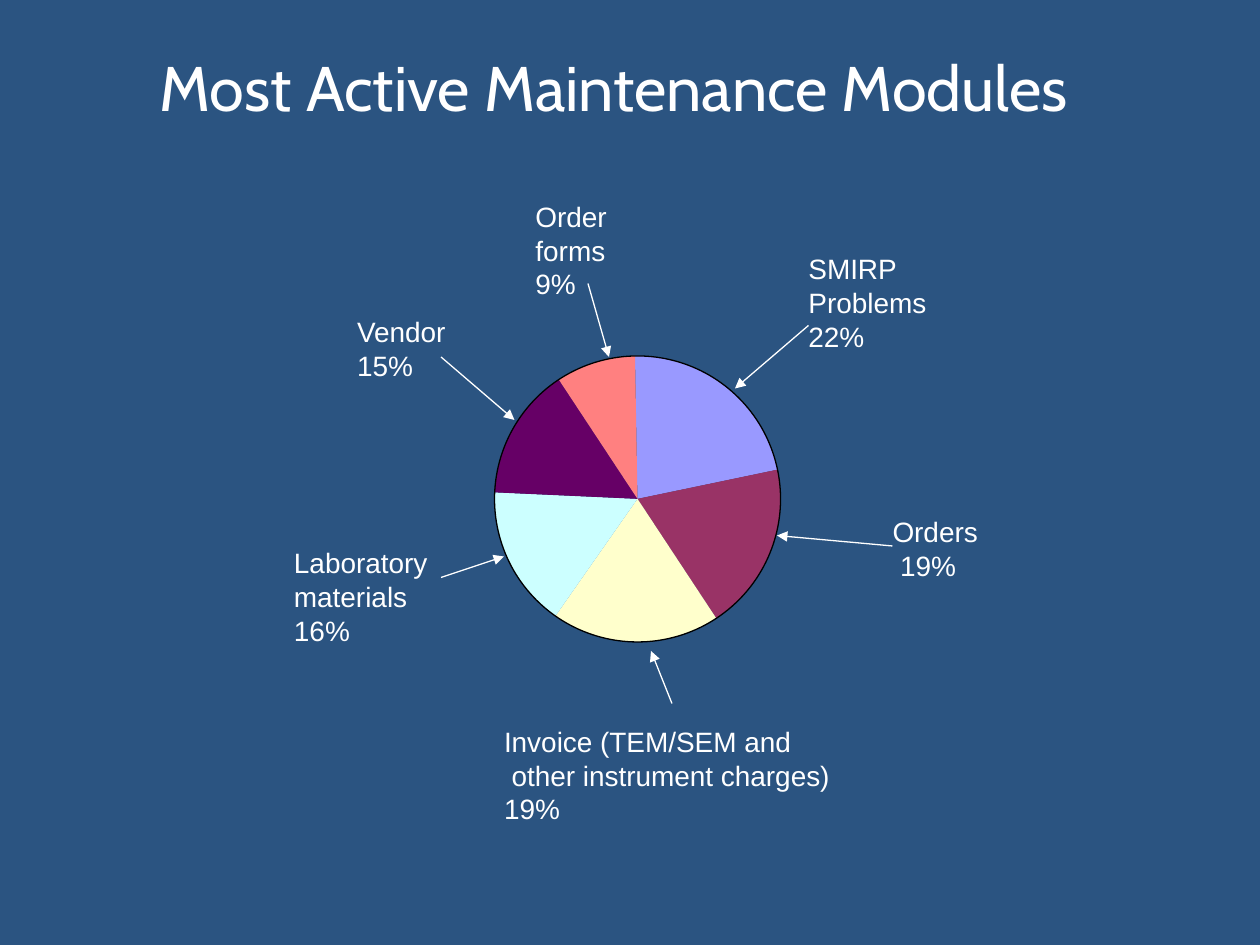
"""Build a slide with a labelled pie of the most active maintenance modules."""
from lxml.etree import SubElement
from pptx import Presentation
from pptx.chart.data import CategoryChartData
from pptx.dml.color import RGBColor
from pptx.enum.chart import XL_CHART_TYPE
from pptx.enum.shapes import MSO_CONNECTOR, MSO_SHAPE
from pptx.enum.text import MSO_ANCHOR, PP_ALIGN
from pptx.oxml import parse_xml
from pptx.oxml.ns import nsdecls, qn
from pptx.util import Inches, Pt

COLORS = {"background": "2B5481", "text": "FFFFFF", "outline": "000000"}
TITLE = "Most Active Maintenance Modules"
TITLE_BOX = (14, 4, 92.5, 8.5)
MODULES = [
    {"lines": ["SMIRP", "Problems"], "share": 22, "color": "9999FF",
     "label": (77, 24, 12), "arrow": (77, 31, 70, 37)},
    {"lines": ["Orders"], "share": 19, "color": "993366", "indent": True,
     "label": (85, 49, 9), "arrow": (85, 52, 74, 51)},
    {"lines": ["Invoice (TEM/SEM and", "other instrument charges)"], "share": 19,
     "color": "FFFFCC", "indent": True, "label": (48, 69, 32), "arrow": (64, 67, 62, 62)},
    {"lines": ["Laboratory", "materials"], "share": 16, "color": "CCFFFF",
     "label": (28, 52, 13), "arrow": (42, 55, 48, 53)},
    {"lines": ["Vendor"], "share": 15, "color": "660066",
     "label": (34, 30, 9), "arrow": (42, 34, 49, 40)},
    {"lines": ["Order", "forms"], "share": 9, "color": "FF8080",
     "label": (51, 19, 7), "arrow": (56, 27, 58, 34)},
]
WIDTH, HEIGHT = Inches(10), Inches(7.5)
COLUMNS = 120
LINE_ROWS = 3.2
PIE_CENTER = (5.06, 3.96)
PIE_SIZE, CHART_SIZE = 2.27, 3
START_ANGLE = 359


def grid(*cells):
    """Turn grid cells into slide lengths."""
    return [round(cell * WIDTH / COLUMNS) for cell in cells]


def centered_box(size):
    """Return the square of a given size around the pie center."""
    left, top = (center - size / 2 for center in PIE_CENTER)
    return Inches(left), Inches(top), Inches(size), Inches(size)


def write_text(shape, lines, font="Arial", size=16, margin=None, indent_second=False):
    """Fill a shape with one left-aligned paragraph per line."""
    frame = shape.text_frame
    frame.word_wrap = False
    frame.vertical_anchor = MSO_ANCHOR.TOP
    if margin is not None:
        frame.margin_left = frame.margin_right = margin
        frame.margin_top = frame.margin_bottom = margin
    for index, line in enumerate(lines):
        paragraph = frame.add_paragraph() if index else frame.paragraphs[0]
        paragraph.alignment = PP_ALIGN.LEFT
        if indent_second and index == 1:
            properties = paragraph._p.get_or_add_pPr()
            properties.set("marL", str(Inches(0.06)))
            properties.set("indent", "0")
        run = paragraph.add_run()
        run.text = line
        run.font.name = font
        run.font.size = Pt(size)
        run.font.color.rgb = RGBColor.from_string(COLORS["text"])


def add_pie(slide):
    """Add the pie chart and its round outline."""
    data = CategoryChartData()
    data.categories = [" ".join(module["lines"]) for module in MODULES]
    data.add_series("Share", [module["share"] for module in MODULES])
    chart = slide.shapes.add_chart(XL_CHART_TYPE.PIE, *centered_box(CHART_SIZE), data).chart
    chart.has_legend = False
    chart.has_title = False
    chart.font.name = "Arial"
    chart.font.size = Pt(16)
    chart.font.color.rgb = RGBColor.from_string(COLORS["text"])
    plot = chart.plots[0]
    plot.vary_by_categories = True
    for index, module in enumerate(MODULES):
        point_format = plot.series[0].points[index].format
        point_format.fill.solid()
        point_format.fill.fore_color.rgb = RGBColor.from_string(module["color"])
        point_format.line.fill.background()

    pie = chart._chartSpace.find(".//" + qn("c:pieChart"))
    angle = pie.find(qn("c:firstSliceAng"))
    if angle is None:
        angle = SubElement(pie, qn("c:firstSliceAng"))
    angle.set("val", str(START_ANGLE))
    share = PIE_SIZE / CHART_SIZE
    offset = (1 - share) / 2
    places = {"x": offset, "y": offset, "w": share, "h": share}
    layout = parse_xml(
        f'<c:layout {nsdecls("c")}><c:manualLayout><c:layoutTarget val="inner"/>'
        '<c:xMode val="edge"/><c:yMode val="edge"/>'
        + "".join(f'<c:{name} val="{value:.4f}"/>' for name, value in places.items())
        + "</c:manualLayout></c:layout>")
    plot_area = pie.getparent()
    old_layout = plot_area.find(qn("c:layout"))
    if old_layout is not None:
        plot_area.remove(old_layout)
    plot_area.insert(0, layout)

    outline = slide.shapes.add_shape(MSO_SHAPE.OVAL, *centered_box(PIE_SIZE))
    outline.shadow.inherit = False
    outline.fill.background()
    outline.line.color.rgb = RGBColor.from_string(COLORS["outline"])
    outline.line.width = Pt(0.75)


def add_label(slide, module):
    """Add the name and share of one module."""
    lines = module["lines"] + [f"{module['share']}%"]
    left, top, width = module["label"]
    box = slide.shapes.add_textbox(*grid(left, top, width, LINE_ROWS * len(lines)))
    write_text(box, lines, margin=0, indent_second=module.get("indent", False))


def add_arrow(slide, module):
    """Add the arrow from a label to its slice."""
    arrow = slide.shapes.add_connector(MSO_CONNECTOR.STRAIGHT, *grid(*module["arrow"]))
    arrow.line.color.rgb = RGBColor.from_string(COLORS["text"])
    arrow.line.width = Pt(0.75)
    SubElement(arrow.line._get_or_add_ln(), qn("a:tailEnd"), type="triangle")
    SubElement(arrow._element.spPr, qn("a:effectLst"))


def main():
    """Build and save the presentation."""
    presentation = Presentation()
    presentation.slide_width, presentation.slide_height = WIDTH, HEIGHT
    slide = presentation.slides.add_slide(presentation.slide_layouts[5])
    slide.background.fill.solid()
    slide.background.fill.fore_color.rgb = RGBColor.from_string(COLORS["background"])
    title = slide.shapes.title
    title.left, title.top, title.width, title.height = grid(*TITLE_BOX)
    write_text(title, [TITLE], font="Cabin", size=36)
    add_pie(slide)
    for add_part in (add_label, add_arrow):
        for module in MODULES:
            add_part(slide, module)
    presentation.save("out.pptx")


if __name__ == "__main__":
    main()
